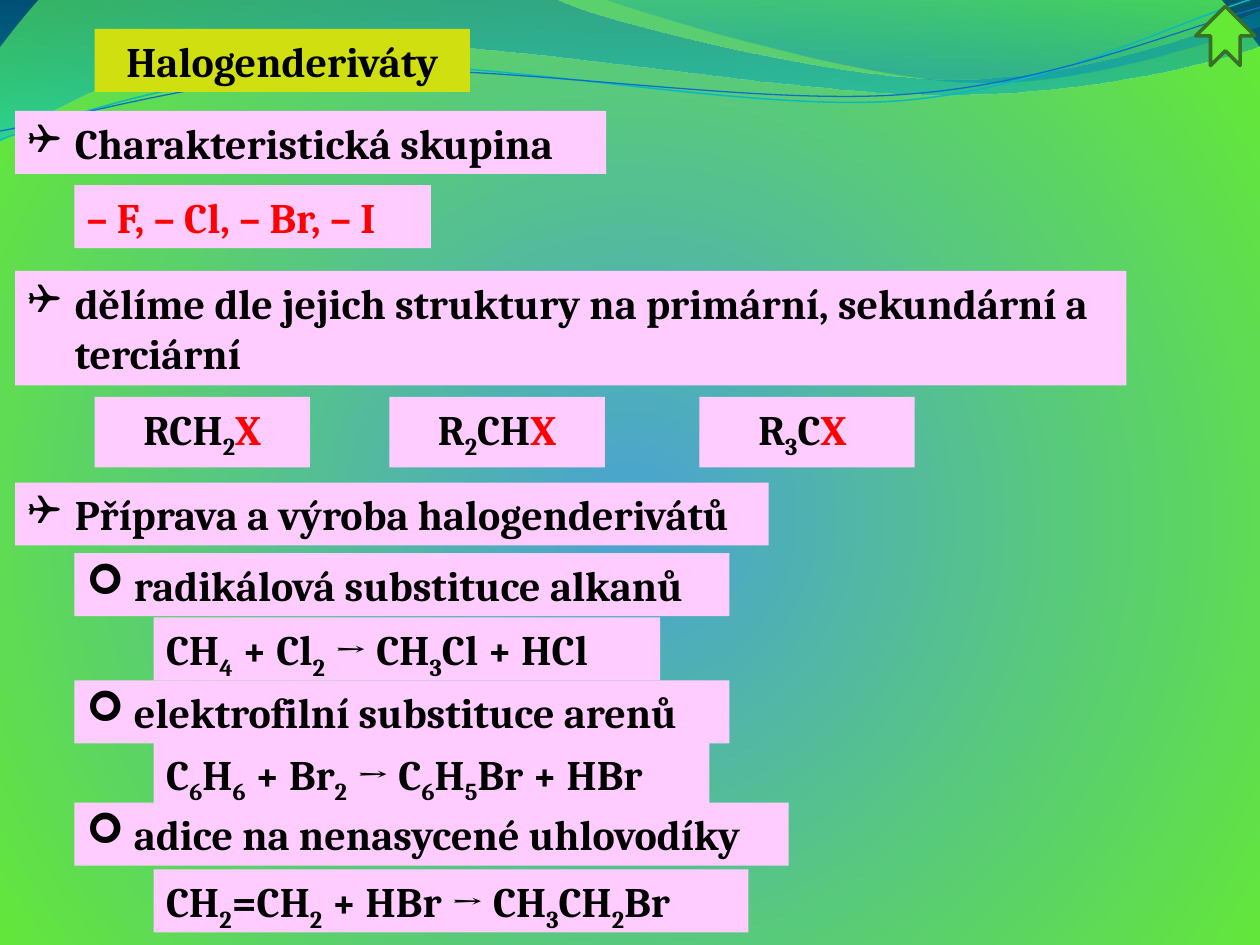
import itertools
import math

import pptx
import pptx.util
import pptx.dml.color
import pptx.enum.shapes
import pptx.enum.text
import pptx.oxml
import pptx.oxml.ns

Inches = pptx.util.Inches
Pt = pptx.util.Pt
RGBColor = pptx.dml.color.RGBColor
qn = pptx.oxml.ns.qn
NAMESPACE = pptx.oxml.ns.nsdecls("a")
NBSP = chr(160)

PINK = RGBColor(0xFF, 0xCC, 0xFF)
LIME = RGBColor(0xD0, 0xDF, 0x0F)
GREEN = RGBColor(0x64, 0xE9, 0x35)
DARK_GREEN = RGBColor(0x38, 0x70, 0x26)
SKY = RGBColor(0x4A, 0xA2, 0xD4)
NAVY = RGBColor(0x00, 0x33, 0x51)
BLACK = RGBColor(0x00, 0x00, 0x00)
RED = RGBColor(0xFF, 0x00, 0x00)
OCEAN = RGBColor(0x00, 0x74, 0xA1)
AQUA = RGBColor(0x00, 0xC6, 0xCF)
TEAL = RGBColor(0x00, 0xA1, 0xA9)
AZURE = RGBColor(0x00, 0x8B, 0xBF)
CYAN = RGBColor(0x0A, 0xB8, 0xBF)
BLUE = RGBColor(0x0F, 0x6F, 0xC6)

WAVES = [
    ([(0, 0), (4.4, -0.01),
      (4.76, 0.17, 6.64, 0.63, 7.58, 0.63), (8.53, 0.63, 9.58, 0.26, 10, 0.09),
      (10.01, 0.36),
      (9.83, 0.44, 8.7, 0.76, 7.46, 0.75), (6.22, 0.75, 3.82, 0.28, 2.57, 0.34),
      (1.29, 0.36, 0.46, 0.83, -0.01, 1.13)],
     [(0, OCEAN, 45), (100, AQUA, 55)]),
    ([(4.79, -0.01),
      (5.09, 0.11, 6.82, 0.62, 7.69, 0.65), (8.56, 0.69, 9.61, 0.32, 10, 0.21),
      (10, 0)],
     [(0, TEAL, 30), (80, AZURE, 45)]),
]
STRAND_TILT = -2.7
STRANDS = [
    ([(0, 1.11), (0.48, 0.93, 1.58, 0.57, 2.77, 0.52),
      (3.95, 0.47, 5.93, 0.89, 7.13, 0.8), (8.33, 0.71, 9.38, 0.15, 9.98, -0.02)],
     (4.99, 0.58), CYAN, 0.85),
    ([(0, 1.04), (0.47, 0.96, 1.64, 0.61, 2.83, 0.56),
      (4.03, 0.51, 5.97, 0.84, 7.17, 0.75), (8.36, 0.67, 9.41, 0.21, 10, 0.06)],
     (5, 0.59), BLUE, 0.75),
]

TITLE = ("Halogenderiváty", 0.75, 0.23, 2.98)
GROUP = ("– F, – Cl, – Br, – I", 0.59, 1.47, 2.83)
TOPICS = [
    ("Charakteristická skupina", 0.88, 4.69, 0.5),
    ("dělíme dle jejich struktury na primární, sekundární a terciární", 2.15, 8.82, 0.91),
    ("Příprava a výroba halogenderivátů", 3.83, 5.98, 0.5),
]
CLASSES = [("RCH2X", 0.75), ("R2CHX", 3.09), ("R3CX" + NBSP, 5.55)]
METHODS = [
    ("radikálová substituce alkanů", 4.39, 5.2),
    ("elektrofilní substituce arenů", 5.4, 5.2),
    ("adice na nenasycené uhlovodíky", 6.37, 5.67),
]
EQUATIONS = [
    ("CH4 + Cl2 → CH3Cl + HCl", 4.9, 4.02),
    ("C6H6 + Br2 → C6H5Br + HBr", 5.89, 4.41),
    ("CH2=CH2 + HBr → CH3CH2Br", 6.9, 4.72),
]


def set_gradient(fill, stops, direction):
    fill.gradient()
    gradient = fill._xPr.find(qn("a:gradFill"))
    for child in list(gradient):
        gradient.remove(child)
    stop_xml = "".join(
        f'<a:gs pos="{position * 1000}"><a:srgbClr val="{color}">'
        f'<a:alpha val="{opacity * 1000}"/></a:srgbClr></a:gs>'
        for position, color, opacity in stops)
    gradient.append(pptx.oxml.parse_xml(f"<a:gsLst {NAMESPACE}>{stop_xml}</a:gsLst>"))
    gradient.append(pptx.oxml.parse_xml(direction))


def turn(path, center, degrees):
    cos, sin = math.cos(math.radians(degrees)), math.sin(math.radians(degrees))
    turned = []
    for segment in path:
        offsets = [(x - center[0], y - center[1])
                   for x, y in zip(segment[::2], segment[1::2])]
        turned.append([value for dx, dy in offsets
                       for value in (center[0] + dx * cos - dy * sin,
                                     center[1] + dx * sin + dy * cos)])
    return turned


def add_curve(page, path, close):
    start, *rest = [(Inches(x), Inches(y)) for segment in path
                    for x, y in zip(segment[::2], segment[1::2])]
    builder = page.shapes.build_freeform(*start)
    builder.add_line_segments(rest, close=close)
    curve = builder.convert_to_shape()
    curve.shadow.inherit = False
    lines = iter(list(curve._element.iter(qn("a:lnTo"))))
    for segment in path[1:]:
        line = next(lines)
        if len(segment) == 6:
            bezier = pptx.oxml.parse_xml(f"<a:cubicBezTo {NAMESPACE}/>")
            line.addprevious(bezier)
            for part in (line, next(lines), next(lines)):
                bezier.append(part[0])
                part.getparent().remove(part)
    return curve


def text_kind(letter):
    return "sub" if letter.isdigit() else "halogen" if letter == "X" else "plain"


def add_label(page, text, left, top, width, height=0.5, fill=PINK, color=BLACK,
              centered=False, bullet=None):
    box = page.shapes.add_textbox(Inches(left), Inches(top), Inches(width), Inches(height))
    box.fill.solid()
    box.fill.fore_color.rgb = fill
    box.text_frame.word_wrap = True
    box.text_frame.auto_size = pptx.enum.text.MSO_AUTO_SIZE.SHAPE_TO_FIT_TEXT
    para = box.text_frame.paragraphs[0]
    if centered:
        para.alignment = pptx.enum.text.PP_ALIGN.CENTER
    if bullet:
        properties = para._p.get_or_add_pPr()
        properties.set("marL", str(Pt(27)))
        properties.set("indent", str(-Pt(27)))
        properties.append(pptx.oxml.parse_xml(f'<a:buFont {NAMESPACE} typeface="Wingdings"/>'))
        properties.append(pptx.oxml.parse_xml(f'<a:buChar {NAMESPACE} char="{bullet}"/>'))
    for kind, letters in itertools.groupby(text, text_kind):
        span = para.add_run()
        span.text = "".join(letters)
        span.font.size = Pt(24)
        span.font.bold = True
        span.font.name = "Cambria"
        span.font.color.rgb = RED if kind == "halogen" else color
        if kind == "sub":
            span.font._element.set("baseline", "-25000")


def main():
    deck = pptx.Presentation()
    deck.slide_width = Inches(10)
    deck.slide_height = Inches(7.5)
    page = deck.slides.add_slide(deck.slide_layouts[6])

    set_gradient(page.background.fill,
                 [(0, SKY, 100), (100, GREEN, 100), (100, NAVY, 100)],
                 f'<a:path {NAMESPACE} path="circle">'
                 '<a:fillToRect l="50000" t="55000" r="50000" b="45000"/></a:path>')
    for path, stops in WAVES:
        wave = add_curve(page, path, True)
        set_gradient(wave.fill, stops, f'<a:lin {NAMESPACE} ang="5400000" scaled="0"/>')
        wave.line.fill.background()
    for path, center, color, weight in STRANDS:
        strand = add_curve(page, turn(path, center, -STRAND_TILT), False)
        strand.rotation = STRAND_TILT
        strand.fill.background()
        strand.line.color.rgb = color
        strand.line.width = Pt(weight)

    add_label(page, *TITLE, fill=LIME, centered=True)
    add_label(page, *GROUP, color=RED)
    for text, top, width, height in TOPICS:
        add_label(page, text, 0.12, top, width, height, bullet="❑")
    for formula, left in CLASSES:
        add_label(page, formula, left, 3.15, 1.71, 0.56, centered=True)
    for name, top, width in METHODS:
        add_label(page, name, 0.59, top, width, bullet="➢")
    for equation, top, width in EQUATIONS:
        add_label(page, equation.replace(" ", NBSP), 1.22, top, width)

    arrow = page.shapes.add_shape(pptx.enum.shapes.MSO_SHAPE.NOTCHED_RIGHT_ARROW,
                                  Inches(9.49), Inches(0.05), Inches(0.47), Inches(0.47))
    arrow.rotation = 270
    arrow.shadow.inherit = False
    arrow.fill.solid()
    arrow.fill.fore_color.rgb = GREEN
    arrow.line.color.rgb = DARK_GREEN
    arrow.line.width = Pt(2)

    deck.save("out.pptx")


if __name__ == "__main__":
    main()
